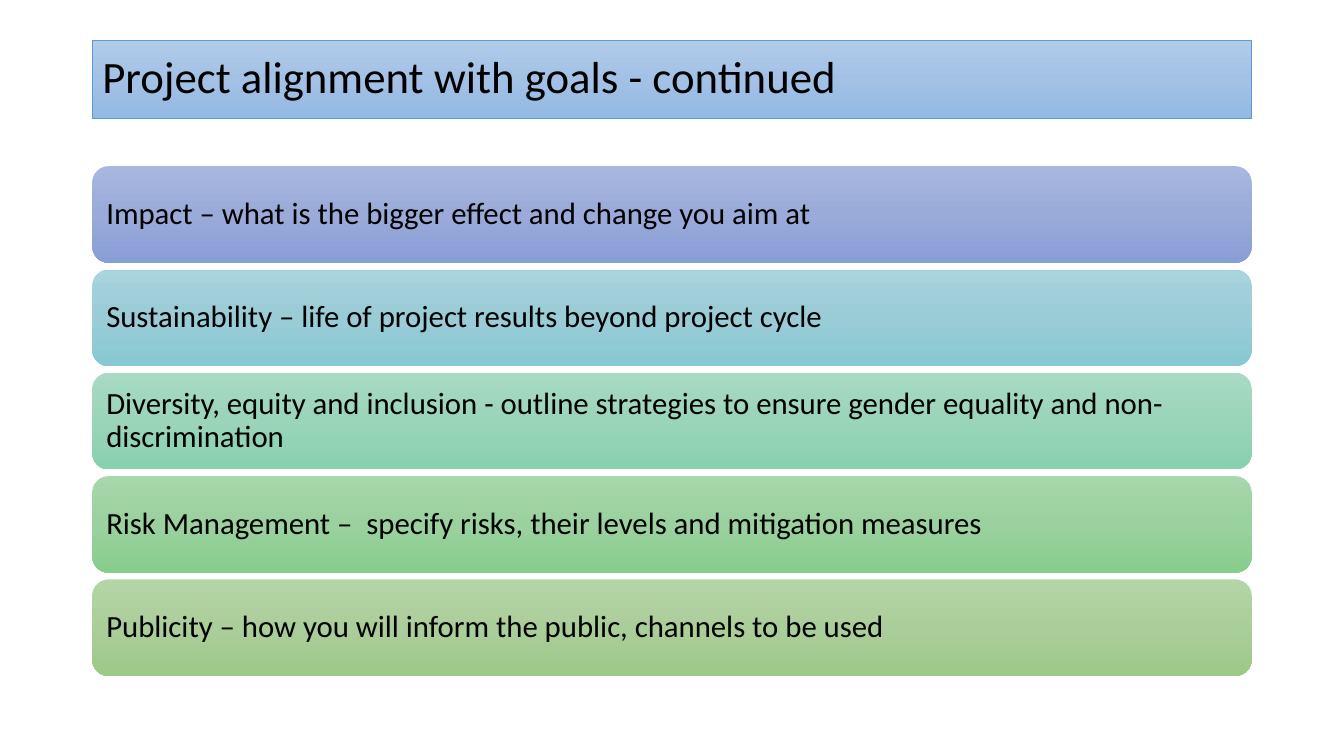
from copy import deepcopy

from pptx import Presentation
from pptx.dml.color import RGBColor
from pptx.enum import shapes, text
from pptx.oxml import ns
from pptx.util import Pt

HEADING = "Project alignment with goals - continued"
HEADING_SHADES = ("B1CBE9", "A3C1E5", "93B9E4")
GOALS = [
    ("Impact – what is the bigger effect and change you aim at",
     ("A8B7DF", "9AABD9", "889ED7")),
    ("Sustainability – life of project results beyond project cycle",
     ("A8D4DD", "9ACCD6", "88C8D4")),
    ("Diversity, equity and inclusion - outline strategies to ensure gender equality and non-discrimination",
     ("A8DAC3", "9AD4B9", "87D1AF")),
    ("Risk Management –  specify risks, their levels and mitigation measures",
     ("A7D7AB", "9AD19E", "87CD8C")),
    ("Publicity – how you will inform the public, channels to be used",
     ("B5D5A7", "AACE9A", "9CC987")),
]


def color(value):
    return RGBColor.from_string(value)


def shade(panel, shades):
    panel.fill.gradient()
    panel.fill.gradient_angle = 270
    stops = panel._element.spPr.find(ns.qn("a:gradFill")).find(ns.qn("a:gsLst"))
    stops.insert(1, deepcopy(stops[0]))
    for stop, position, value in zip(panel.fill.gradient_stops, (0, 0.5, 1), shades):
        stop.position = position
        stop.color.rgb = color(value)


def write(panel, words, size, inset_x, inset_y, space_after=0):
    frame = panel.text_frame
    frame.word_wrap = True
    frame.vertical_anchor = text.MSO_ANCHOR.MIDDLE
    frame.margin_left = frame.margin_right = Pt(inset_x)
    frame.margin_top = frame.margin_bottom = Pt(inset_y)
    paragraph = frame.paragraphs[0]
    paragraph.alignment = text.PP_ALIGN.LEFT
    paragraph.line_spacing = 0.9
    paragraph.space_after = Pt(space_after)
    run = paragraph.add_run()
    run.text = words
    run.font.name = "Calibri"
    run.font.size = Pt(size)
    run.font.color.rgb = color("000000")


def add_panel(slide, outline, box, shades):
    panel = slide.shapes.add_shape(outline, *map(Pt, box))
    panel.shadow.inherit = False
    shade(panel, shades)
    panel.line.fill.background()
    return panel


def add_heading(slide, box):
    heading = add_panel(slide, shapes.MSO_SHAPE.RECTANGLE, box, HEADING_SHADES)
    heading.line.color.rgb = color("5B9BD5")
    heading.line.width = Pt(0.5)
    write(heading, HEADING, size=32, inset_x=7.2, inset_y=3.6)


def add_goals(slide, box, gap):
    left, top, width, height = box
    bar_height = (height - gap * (len(GOALS) - 1)) / len(GOALS)
    for index, (goal, shades) in enumerate(GOALS):
        bar_box = (left, top + index * (bar_height + gap), width, bar_height)
        bar = add_panel(slide, shapes.MSO_SHAPE.ROUNDED_RECTANGLE, bar_box, shades)
        write(bar, goal, size=22, inset_x=6.6, inset_y=6.6, space_after=7.7)


def main():
    deck = Presentation()
    deck.slide_width, deck.slide_height = Pt(960), Pt(540)
    slide = deck.slides.add_slide(deck.slide_layouts[6])
    add_heading(slide, (66, 28.75, 828, 55.75))
    add_goals(slide, (66, 118.7, 828, 364.1), gap=4.9)
    deck.save("out.pptx")


if __name__ == "__main__":
    main()
